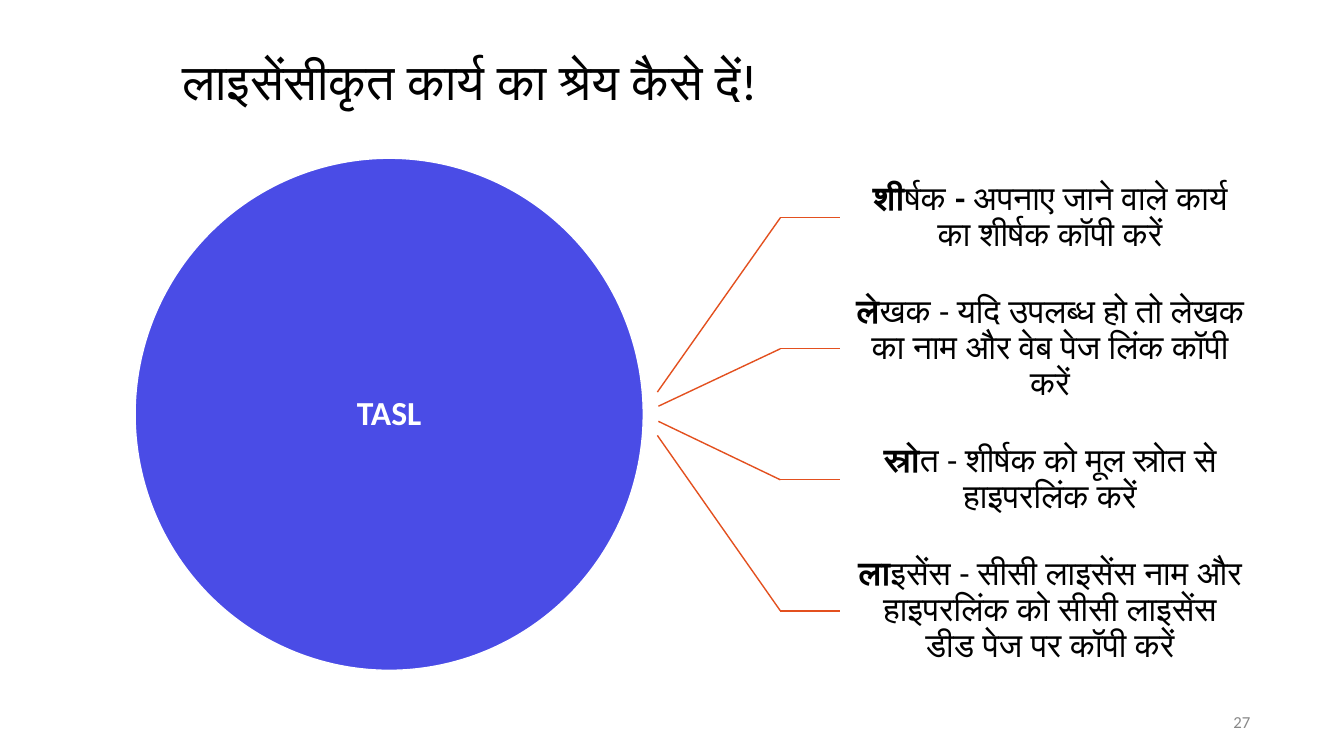
from lxml import etree
from pptx import Presentation
from pptx.dml.color import RGBColor
from pptx.enum.shapes import MSO_CONNECTOR, MSO_SHAPE
from pptx.enum.text import MSO_ANCHOR, MSO_AUTO_SIZE, PP_ALIGN
from pptx.oxml.ns import qn
from pptx.util import Inches, Pt

STRAIGHT = MSO_CONNECTOR.STRAIGHT
OVAL = MSO_SHAPE.OVAL
MIDDLE = MSO_ANCHOR.MIDDLE
NO_AUTOFIT = MSO_AUTO_SIZE.NONE
LEFT, CENTER, RIGHT = PP_ALIGN.LEFT, PP_ALIGN.CENTER, PP_ALIGN.RIGHT

FONT = "Calibri"
BLACK, WHITE, GRAY = "000000", "FFFFFF", "888888"
BLUE, ORANGE = "4A4CE6", "E3501F"

BRANCH_LEFT, LABEL_LEFT, LABEL_TOP = 7.74, 8.33, 1.51
LABEL_WIDTH, LABEL_HEIGHT = 4.17, 1.3

ELEMENTS = [
    ((6.52, 3.89), [("शी", True), ("र्षक", False), (" - ", True),
                    ("अपनाए जाने वाले कार्य का शीर्षक कॉपी करें", False)]),
    ((6.53, 4.03), [("ले", True),
                    ("खक - यदि उपलब्ध हो तो लेखक का नाम और वेब पेज लिंक कॉपी करें", False)]),
    ((6.53, 4.18), [("स्रो", True),
                    ("त - शीर्षक को मूल स्रोत से हाइपरलिंक करें", False)]),
    ((6.52, 4.32), [("ला", True),
                    ("इसेंस - सीसी लाइसेंस नाम और हाइपरलिंक को सीसी लाइसेंस डीड पेज पर कॉपी करें", False)]),
]


def color(hex_string):
    """Turn a hex string into a colour."""
    return RGBColor.from_string(hex_string)


def write(shape, runs, size, font_color, align, spacing=0.9, inset=(0.1, 0.05)):
    """Fill a shape with one paragraph of (text, bold) runs."""
    frame = shape.text_frame
    frame.word_wrap = True
    frame.auto_size = NO_AUTOFIT
    frame.vertical_anchor = MIDDLE
    frame.margin_left = frame.margin_right = Inches(inset[0])
    frame.margin_top = frame.margin_bottom = Inches(inset[1])
    paragraph = frame.paragraphs[0]
    paragraph.alignment = align
    paragraph.line_spacing = spacing
    paragraph.font.name = FONT
    paragraph.font.size = Pt(size)
    paragraph.font.color.rgb = color(font_color)
    for text, bold in runs:
        run = paragraph.add_run()
        run.text = text
        run.font.bold = bold


def add_title(slide, text):
    """Place and format the title placeholder."""
    title = slide.shapes.title
    title.left, title.top = Inches(1.71), Inches(0.4)
    title.width, title.height = Inches(10.71), Inches(0.87)
    write(title, [(text, False)], 36, BLACK, LEFT)


def add_text(slide, left, top, width, height, runs, **style):
    """Add a text box and return it."""
    box = slide.shapes.add_textbox(Inches(left), Inches(top), Inches(width), Inches(height))
    write(box, runs, **style)
    return box


def add_hub(slide, text):
    """Add the large circle the branches start from."""
    hub = slide.shapes.add_shape(OVAL, Inches(1.34), Inches(1.57), Inches(5.04), Inches(5.08))
    hub.shadow.inherit = False
    hub.fill.solid()
    hub.fill.fore_color.rgb = color(BLUE)
    hub.line.color.rgb = color(WHITE)
    hub.line.width = Pt(1)
    write(hub, [(text, True)], 24, WHITE, CENTER, inset=(0, 0))


def add_line(slide, start, end):
    """Add a thin straight line between two points and return it."""
    points = [Inches(value) for value in (*start, *end)]
    line = slide.shapes.add_connector(STRAIGHT, *points)
    line.line.color.rgb = color(ORANGE)
    line.line.width = Pt(1)
    etree.SubElement(line._element.spPr, qn("a:effectLst"))
    return line


def add_branch(slide, index, start, runs):
    """Add one label with the bent line that leads to it."""
    top = LABEL_TOP + index * LABEL_HEIGHT
    middle = top + LABEL_HEIGHT / 2
    bend = (BRANCH_LEFT, middle)
    add_line(slide, start, bend)
    tick = add_line(slide, bend, (LABEL_LEFT, middle))
    label = add_text(slide, LABEL_LEFT, top, LABEL_WIDTH, LABEL_HEIGHT, runs,
                     size=24, font_color=BLACK, align=CENTER, inset=(0.16, 0.16))
    tick.end_connect(label, 1)


def main():
    """Build the slide and save it."""
    deck = Presentation()
    deck.slide_width, deck.slide_height = Inches(13.33), Inches(7.5)
    slide = deck.slides.add_slide(deck.slide_layouts[5])
    add_title(slide, "लाइसेंसीकृत कार्य का श्रेय कैसे दें!")
    add_text(slide, 9.42, 6.97, 3.08, 0.38, [("27", False)],
             size=12, font_color=GRAY, align=RIGHT, spacing=1.0)
    add_hub(slide, "TASL")
    for index, (start, runs) in enumerate(ELEMENTS):
        add_branch(slide, index, start, runs)
    deck.save("out.pptx")


if __name__ == "__main__":
    main()
